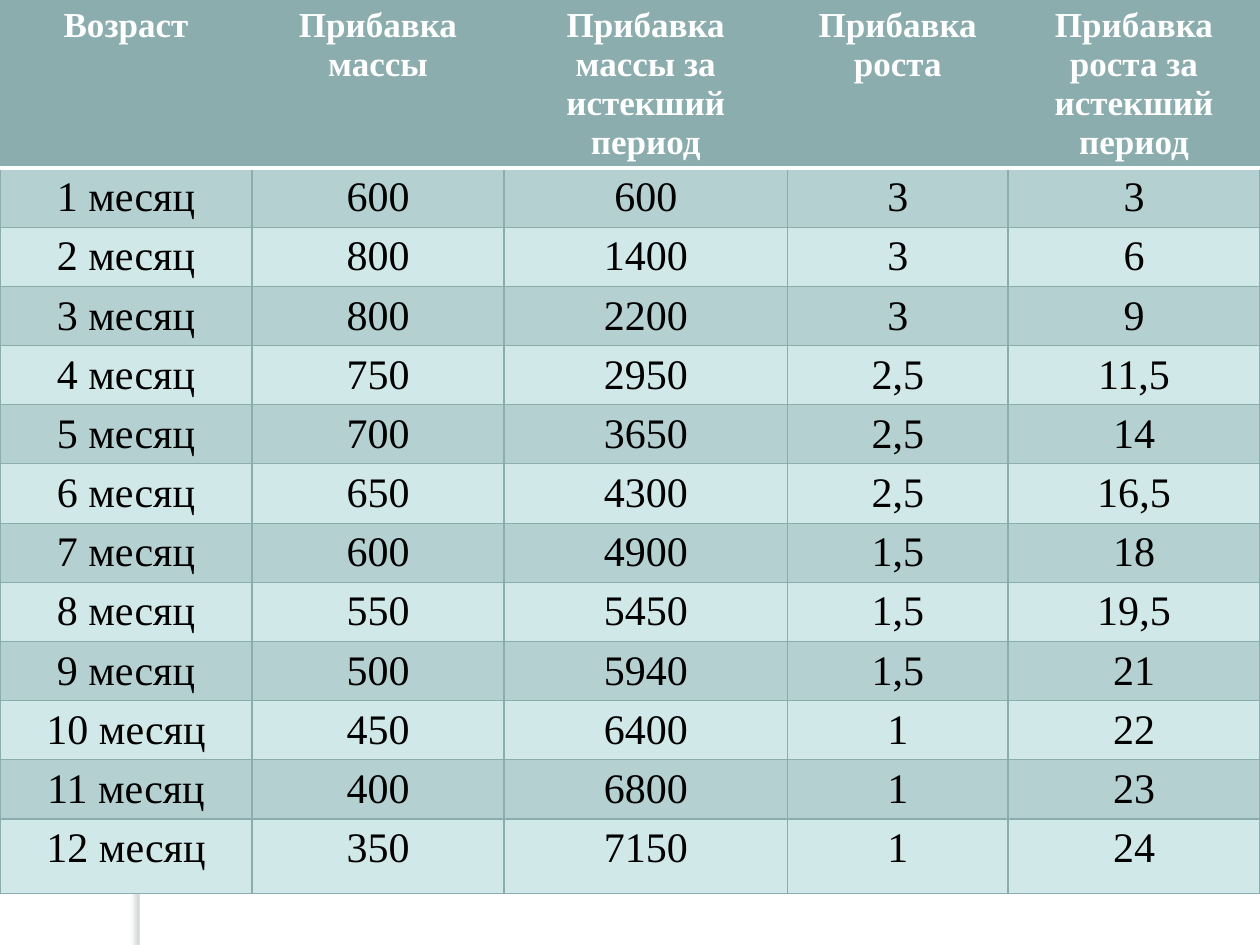
from typing import NamedTuple

import pptx
import pptx.dml.color
import pptx.enum.shapes
import pptx.enum.text
import pptx.oxml
import pptx.oxml.ns
import pptx.util
from pptx.dml.color import RGBColor
from pptx.util import Inches, Pt

TEAL = RGBColor(0x8C, 0xAD, 0xAE)
DARK_BAND = RGBColor(0xB4, 0xD0, 0xD0)
LIGHT_BAND = RGBColor(0xD0, 0xE8, 0xE7)
SHADOW = RGBColor(0x61, 0x68, 0x6B)
WHITE = RGBColor(0xFF, 0xFF, 0xFF)
BLACK = RGBColor(0x00, 0x00, 0x00)

FONT = "Times New Roman"
COLUMN_WIDTHS = (2, 2, 2.25, 1.75, 2)
HEADER_HEIGHT, MONTH_HEIGHT, LAST_HEIGHT = 1.33, 0.47, 0.59
HEADINGS = (
    "Возраст",
    "Прибавка массы",
    "Прибавка массы за истекший период",
    "Прибавка роста",
    "Прибавка роста за истекший период",
)


class Gain(NamedTuple):
    mass: str
    total_mass: str
    height: str
    total_height: str


class Border(NamedTuple):
    color: RGBColor
    width: float


class CellStyle(NamedTuple):
    fill: RGBColor
    color: RGBColor
    size: int
    bold: bool
    top: Border
    bottom: Border


MONTHLY_GAINS = (
    Gain("600", "600", "3", "3"),
    Gain("800", "1400", "3", "6"),
    Gain("800", "2200", "3", "9"),
    Gain("750", "2950", "2,5", "11,5"),
    Gain("700", "3650", "2,5", "14"),
    Gain("650", "4300", "2,5", "16,5"),
    Gain("600", "4900", "1,5", "18"),
    Gain("550", "5450", "1,5", "19,5"),
    Gain("500", "5940", "1,5", "21"),
    Gain("450", "6400", "1", "22"),
    Gain("400", "6800", "1", "23"),
    Gain("350", "7150", "1", "24"),
)
THIN = Border(TEAL, 0.75)
HEADER_RULE = Border(WHITE, 2)
HEADER_STYLE = CellStyle(TEAL, WHITE, 20, True, THIN, HEADER_RULE)


def month_style(month: int) -> CellStyle:
    return CellStyle(
        fill=DARK_BAND if month % 2 else LIGHT_BAND,
        color=BLACK,
        size=24,
        bold=False,
        top=HEADER_RULE if month == 1 else THIN,
        bottom=THIN,
    )


def set_borders(cell, style: CellStyle) -> None:
    properties = cell._tc.get_or_add_tcPr()
    sides = {"lnL": THIN, "lnR": THIN, "lnT": style.top, "lnB": style.bottom}
    for position, (side, border) in enumerate(sides.items()):
        line = pptx.oxml.parse_xml(
            f'<a:{side} {pptx.oxml.ns.nsdecls("a")} w="{Pt(border.width)}">'
            f'<a:solidFill><a:srgbClr val="{border.color}"/></a:solidFill>'
            f'</a:{side}>'
        )
        properties.insert(position, line)


def fill_row(table, row: int, texts: tuple, style: CellStyle) -> None:
    for column, text in enumerate(texts):
        cell = table.cell(row, column)
        cell.fill.solid()
        cell.fill.fore_color.rgb = style.fill
        set_borders(cell, style)
        cell.text_frame.text = text
        paragraph = cell.text_frame.paragraphs[0]
        paragraph.alignment = pptx.enum.text.PP_ALIGN.CENTER
        font = paragraph.runs[0].font
        font.name, font.size, font.bold = FONT, Pt(style.size), style.bold
        font.color.rgb = style.color


def add_side_strip(slide) -> None:
    """Add the white strip that casts a soft shadow to its left."""
    strip = slide.shapes.add_shape(
        pptx.enum.shapes.MSO_SHAPE.RECTANGLE,
        Inches(1.11), Inches(0), Inches(0.08), Inches(7.5),
    )
    strip.fill.solid()
    strip.fill.fore_color.rgb = WHITE
    strip.line.fill.background()
    strip.shadow.inherit = False
    effects = strip._element.spPr.find(pptx.oxml.ns.qn("a:effectLst"))
    effects.append(pptx.oxml.parse_xml(
        f'<a:outerShdw {pptx.oxml.ns.nsdecls("a")} blurRad="{Pt(3)}" '
        f'dist="{Pt(3)}" dir="{180 * 60000}" rotWithShape="0">'
        f'<a:srgbClr val="{SHADOW}"><a:alpha val="25000"/></a:srgbClr>'
        '</a:outerShdw>'
    ))


def add_gain_table(slide) -> None:
    heights = [HEADER_HEIGHT] + [MONTH_HEIGHT] * (len(MONTHLY_GAINS) - 1) + [LAST_HEIGHT]
    table = slide.shapes.add_table(
        len(heights), len(HEADINGS), Inches(0), Inches(0),
        Inches(sum(COLUMN_WIDTHS)), Inches(sum(heights)),
    ).table
    for column, width in zip(table.columns, COLUMN_WIDTHS):
        column.width = Inches(width)
    for row, height in zip(table.rows, heights):
        row.height = Inches(height)
    fill_row(table, 0, HEADINGS, HEADER_STYLE)
    for month, gain in enumerate(MONTHLY_GAINS, start=1):
        fill_row(table, month, (f"{month} месяц", *gain), month_style(month))


def main() -> None:
    presentation = pptx.Presentation()
    presentation.slide_width, presentation.slide_height = Inches(10), Inches(7.5)
    slide = presentation.slides.add_slide(presentation.slide_layouts[6])
    add_side_strip(slide)
    add_gain_table(slide)
    presentation.save("out.pptx")


if __name__ == "__main__":
    main()
